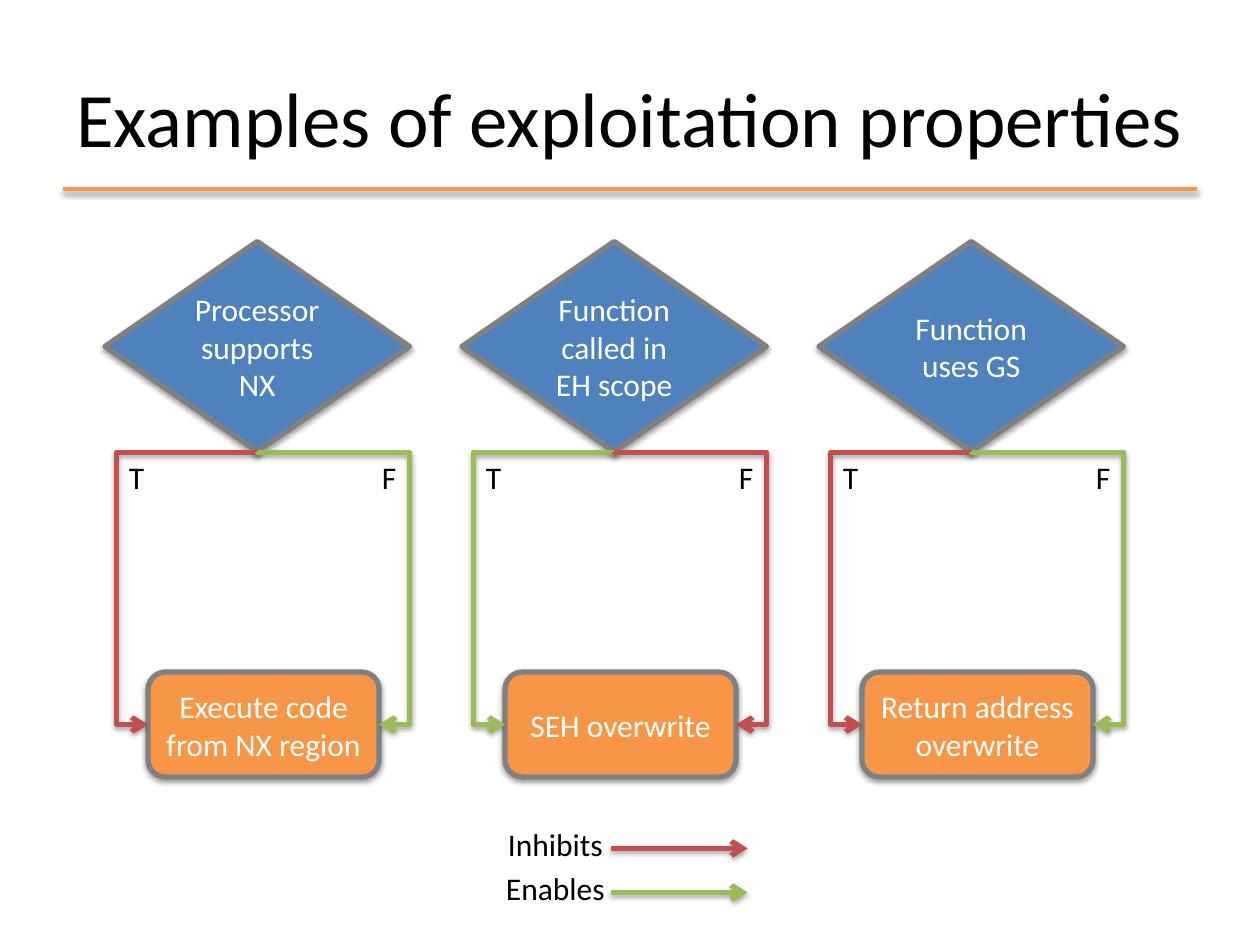
from dataclasses import dataclass

from lxml.etree import SubElement
from pptx import Presentation
from pptx.dml.color import RGBColor
from pptx.enum.shapes import MSO_CONNECTOR, MSO_SHAPE
from pptx.enum.text import MSO_ANCHOR, PP_ALIGN
from pptx.oxml.ns import qn
from pptx.util import Emu, Pt

EMU_PER_PX = 7620
SLIDE_SIZE = (1200, 900)


@dataclass(frozen=True)
class Theme:
    """Colours, font and type sizes of the slide."""
    font: str = "Calibri"
    title_size: int = 44
    body_size: int = 18
    ink: str = "000000"
    light: str = "FFFFFF"
    condition: str = "4F81BD"
    accent: str = "F79646"
    outline: str = "808080"
    inhibits: str = "C0504D"
    enables: str = "9BBB59"


THEME = Theme()
PROPERTIES = [
    ("Processor supports NX", "Execute code from NX region", THEME.inhibits, THEME.enables),
    ("Function called in EH scope", "SEH overwrite", THEME.enables, THEME.inhibits),
    ("Function uses GS", "Return address overwrite", THEME.inhibits, THEME.enables),
]
LEGEND = [("Inhibits", THEME.inhibits, 2, 115), ("Enables", THEME.enables, 0, 119)]


def px(*lengths):
    """Turn px lengths into EMU."""
    return [Emu(round(length * EMU_PER_PX)) for length in lengths]


def write(frame, text, size, color, align):
    """Set one paragraph of text and format it."""
    frame.text = text
    paragraph = frame.paragraphs[0]
    paragraph.alignment = align
    font = paragraph.runs[0].font
    font.name, font.size = THEME.font, Pt(size)
    font.color.rgb = RGBColor.from_string(color)


def add_shadow(item, opacity):
    """Give a shape or connector a soft shadow falling straight down."""
    effects = SubElement(item._element.spPr, qn("a:effectLst"))
    shadow = SubElement(effects, qn("a:outerShdw"), blurRad="40000", dist="20000",
                        dir="5400000", rotWithShape="0")
    black = SubElement(shadow, qn("a:srgbClr"), val="000000")
    SubElement(black, qn("a:alpha"), val=str(opacity * 1000))


def style_line(connector, color, width, opacity, arrow=True):
    """Format a connector, with an arrowhead at its end if wanted."""
    connector.line.color.rgb = RGBColor.from_string(color)
    connector.line.width = Pt(width)
    if arrow:
        SubElement(connector.line._get_or_add_ln(), qn("a:tailEnd"), type="arrow")
    add_shadow(connector, opacity)


def add_node(slide, preset, box, text, fill):
    """Add an outlined shape with centred light text."""
    node = slide.shapes.add_shape(preset, *px(*box))
    node.fill.solid()
    node.fill.fore_color.rgb = RGBColor.from_string(fill)
    node.line.color.rgb = RGBColor.from_string(THEME.outline)
    node.line.width = Pt(3)
    add_shadow(node, 38)
    node.text_frame.word_wrap = True
    node.text_frame.vertical_anchor = MSO_ANCHOR.MIDDLE
    write(node.text_frame, text, THEME.body_size, THEME.light, PP_ALIGN.CENTER)
    return node


def add_label(slide, box, text):
    """Add a short dark label."""
    label = slide.shapes.add_textbox(*px(*box))
    label.text_frame.word_wrap = False
    write(label.text_frame, text, THEME.body_size, THEME.ink, PP_ALIGN.LEFT)


def add_branch(slide, condition, outcome, site, rail, color):
    """Lead from the foot of a condition along a side rail into an outcome."""
    start_x = condition.left + condition.width // 2
    start_y = condition.top + condition.height
    end_x = outcome.left + (outcome.width if site == 3 else 0)
    drop = outcome.top + outcome.height // 2 - start_y
    reach = abs(end_x - start_x)
    branch = slide.shapes.add_connector(MSO_CONNECTOR.ELBOW, 0, 0, 0, 0)
    branch.begin_connect(condition, 2)
    branch.end_connect(outcome, site)
    branch.left = Emu((start_x + end_x - drop) // 2)
    branch.top = Emu(start_y + (drop - reach) // 2)
    branch.width, branch.height = Emu(drop), Emu(reach)
    transform = branch._element.spPr.find(qn("a:xfrm"))
    transform.set("rot", "16200000" if site == 3 else "5400000")
    transform.set("flipH", "1" if site == 3 else "0")
    transform.set("flipV", "0")
    geometry = branch._element.spPr.find(qn("a:prstGeom"))
    geometry.set("prst", "bentConnector4")
    guides = geometry.find(qn("a:avLst"))
    overshoot = abs(px(rail)[0] - start_x) / reach
    for name, share in (("adj1", 0.003), ("adj2", overshoot)):
        SubElement(guides, qn("a:gd"), name=name, fmla=f"val {round(share * 100000)}")
    style_line(branch, color, 3, 35)


def add_heading(slide, left, top, width, height):
    """Place the title and the rule near its foot."""
    title = slide.shapes.title
    title.left, title.top, title.width, title.height = px(left, top, width, height)
    title.text_frame.vertical_anchor = MSO_ANCHOR.MIDDLE
    write(title.text_frame, "Examples of exploitation properties",
          THEME.title_size, THEME.ink, PP_ALIGN.CENTER)
    rule_y = top + height - 6
    rule = slide.shapes.add_connector(
        MSO_CONNECTOR.STRAIGHT, *px(left, rule_y, left + width, rule_y))
    style_line(rule, THEME.accent, 2, 38, arrow=False)


def add_property(slide, left, top, width, height, content):
    """Draw one condition, its outcome and the true and false branches."""
    question, result, true_color, false_color = content
    condition = add_node(slide, MSO_SHAPE.FLOWCHART_DECISION,
                         (left, top, width, 200), question, THEME.condition)
    outcome = add_node(slide, MSO_SHAPE.ROUNDED_RECTANGLE,
                       (left + 41, top + height - 100, 220, 100), result, THEME.accent)
    add_branch(slide, condition, outcome, 1, left + 11, true_color)
    add_branch(slide, condition, outcome, 3, left + width, false_color)
    add_label(slide, (left + 11, top + 200, 38, 48), "T")
    add_label(slide, (left + width - 38, top + 200, 38, 48), "F")


def add_legend(slide, left, top, row_height):
    """Explain the two arrow colours."""
    for row, (meaning, color, indent, width) in enumerate(LEGEND):
        row_top = top + row * row_height
        add_label(slide, (left + indent, row_top, width, 48), meaning)
        arrow = slide.shapes.add_connector(
            MSO_CONNECTOR.STRAIGHT,
            *px(left + 112, row_top + 28, left + 242, row_top + 28))
        style_line(arrow, color, 3, 35)


def main():
    """Build and save the slide."""
    deck = Presentation()
    deck.slide_width, deck.slide_height = px(*SLIDE_SIZE)
    slide = deck.slides.add_slide(deck.slide_layouts[5])
    add_heading(slide, 60, 36, 1080, 150)
    for column, content in enumerate(PROPERTIES):
        add_property(slide, 100 + 340 * column, 230, 290, 510, content)
    add_legend(slide, 470, 780, 42)
    deck.save("out.pptx")


if __name__ == "__main__":
    main()
